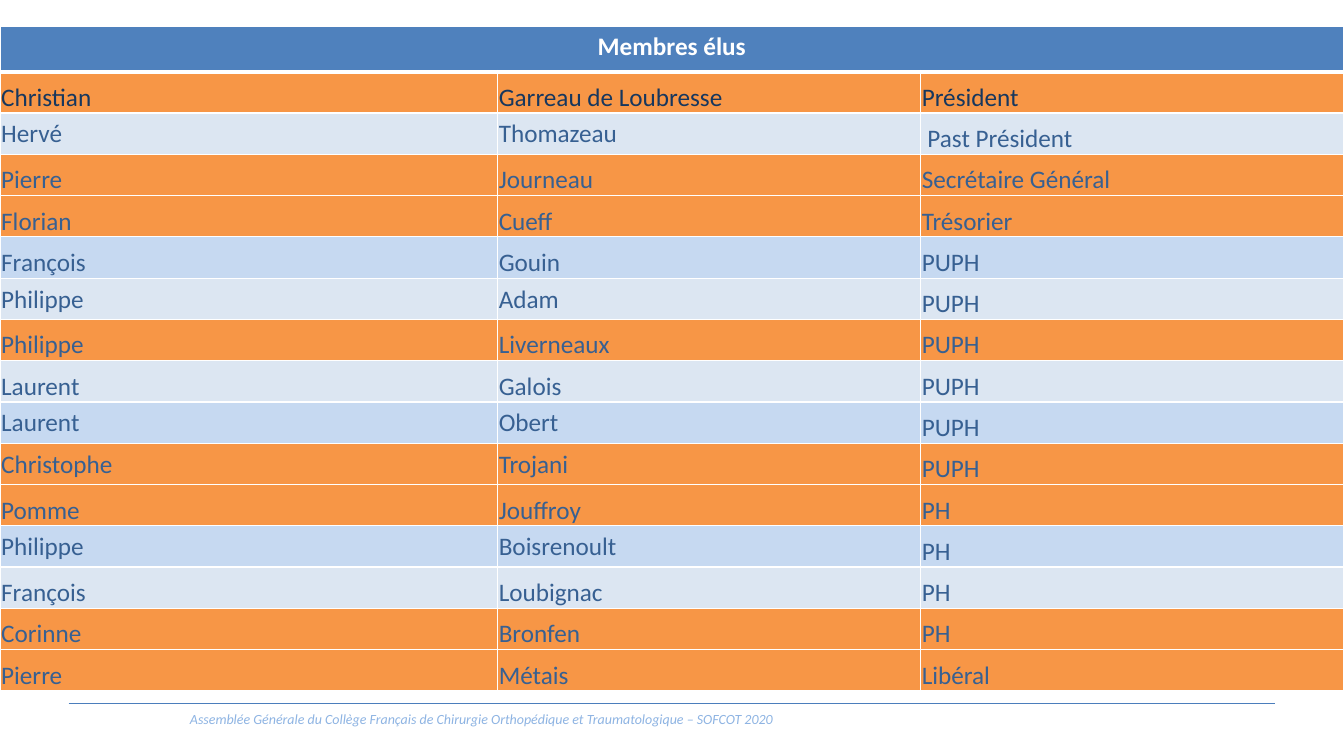
from lxml.etree import SubElement
from pptx import Presentation
from pptx.dml.color import RGBColor
from pptx.enum.shapes import MSO_CONNECTOR
from pptx.enum.text import MSO_ANCHOR, PP_ALIGN
from pptx.oxml.ns import qn
from pptx.util import Cm, Pt

ORANGE, PALE, BLUE = "F79646", "DCE6F2", "C6D9F1"
NAVY, STEEL = "17375E", "376092"
BOTTOM, MIDDLE = MSO_ANCHOR.BOTTOM, MSO_ANCHOR.MIDDLE

# first name, surname, role, row fill, anchor of the two name cells
MEMBERS = [
    ("Christian", "Garreau de Loubresse", "Président", ORANGE, BOTTOM),
    ("Hervé", "Thomazeau", " Past Président", PALE, MIDDLE),
    ("Pierre", "Journeau", "Secrétaire Général", ORANGE, BOTTOM),
    ("Florian", "Cueff", "Trésorier", ORANGE, BOTTOM),
    ("François", "Gouin", "PUPH", BLUE, BOTTOM),
    ("Philippe", "Adam", "PUPH", PALE, MIDDLE),
    ("Philippe", "Liverneaux", "PUPH", ORANGE, BOTTOM),
    ("Laurent", "Galois", "PUPH", PALE, BOTTOM),
    ("Laurent", "Obert", "PUPH", BLUE, MIDDLE),
    ("Christophe", "Trojani", "PUPH", ORANGE, MIDDLE),
    ("Pomme", "Jouffroy", "PH", ORANGE, BOTTOM),
    ("Philippe", "Boisrenoult", "PH", BLUE, MIDDLE),
    ("François", "Loubignac", "PH", PALE, BOTTOM),
    ("Corinne", "Bronfen", "PH", ORANGE, BOTTOM),
    ("Pierre", "Métais", "Libéral", ORANGE, BOTTOM),
]


def rgb(value):
    return RGBColor.from_string(value)


def set_all(target, values):
    for name, value in values.items():
        setattr(target, name, value)


class SlideBuilder:
    """Holds the text style and the slide being filled."""

    def __init__(self, slide):
        self.slide = slide
        self.font = {"name": "Calibri", "size": Pt(18), "bold": False}
        self.margins = {"margin_left": Cm(0.03), "margin_right": Cm(0.03),
                        "margin_top": Cm(0.03), "margin_bottom": 0}

    def add_text(self, tf, text, color, align=PP_ALIGN.LEFT, **font):
        p = tf.paragraphs[0]
        p.alignment = align
        r = p.add_run()
        r.text = text
        set_all(r.font, self.font | font)
        r.font.color.rgb = rgb(color)

    def rule(self, x1, x2, y, color):
        line = self.slide.shapes.add_connector(
            MSO_CONNECTOR.STRAIGHT, Cm(x1), Cm(y), Cm(x2), Cm(y))
        line.line.color.rgb = rgb(color)
        line.line.width = Pt(0.75)
        SubElement(line._element.spPr, qn("a:effectLst"))

    def text_box(self, x, y, w, h, text, color, **style):
        tf = self.slide.shapes.add_textbox(Cm(x), Cm(y), Cm(w), Cm(h)).text_frame
        tf.word_wrap = True
        self.add_text(tf, text, color, **style)

    def cell(self, cell, fill, top=1, bottom=1):
        """Give a cell white borders (widths in points) and a solid fill."""
        tc_pr = cell._tc.get_or_add_tcPr()
        for side, width in zip("LRTB", (1, 1, top, bottom)):
            ln = SubElement(tc_pr, qn(f"a:ln{side}"), w=str(Pt(width)))
            SubElement(SubElement(ln, qn("a:solidFill")), qn("a:srgbClr"), val="FFFFFF")
        cell.fill.solid()
        cell.fill.fore_color.rgb = rgb(fill)

    def member_table(self, y, widths, header_height, row_height, header, members):
        height = header_height + row_height * len(members)
        table = self.slide.shapes.add_table(
            len(members) + 1, len(widths), 0, Cm(y), Cm(sum(widths)), Cm(height)).table
        for column, width in zip(table.columns, widths):
            column.width = Cm(width)
        for i, row in enumerate(table.rows):
            row.height = Cm(row_height if i else header_height)

        for cell in table.rows[0].cells:
            self.cell(cell, "4F81BD", bottom=3)
        title = table.cell(0, 0)
        title.merge(table.cell(0, len(widths) - 1))
        self.add_text(title.text_frame, header, "FFFFFF", PP_ALIGN.CENTER, bold=True)

        for i, (first, last, role, fill, anchor) in enumerate(members, 1):
            color = NAVY if i == 1 else STEEL
            anchors = (anchor, anchor, BOTTOM)
            for j, text in enumerate((first, last, role)):
                cell = table.cell(i, j)
                self.cell(cell, fill, top=3 if i == 1 else 1)
                set_all(cell, self.margins | {"vertical_anchor": anchors[j]})
                self.add_text(cell.text_frame, text, color)


def main():
    prs = Presentation()
    prs.slide_width, prs.slide_height = Cm(33.87), Cm(19.05)
    s = SlideBuilder(prs.slides.add_slide(prs.slide_layouts[6]))
    s.rule(1.73, 32.13, 17.73, "4B7EBC")
    s.text_box(1.73, 17.78, 20.8, 0.69,
               "Assemblée Générale du Collège Français de Chirurgie Orthopédique "
               "et Traumatologique – SOFCOT 2020",
               "8EB4E3", align=PP_ALIGN.CENTER, size=Pt(10), italic=True)
    s.member_table(0.67, (12.54, 10.66, 10.66), 1.14, 1.04, "Membres élus", MEMBERS)
    prs.save("out.pptx")


if __name__ == "__main__":
    main()
